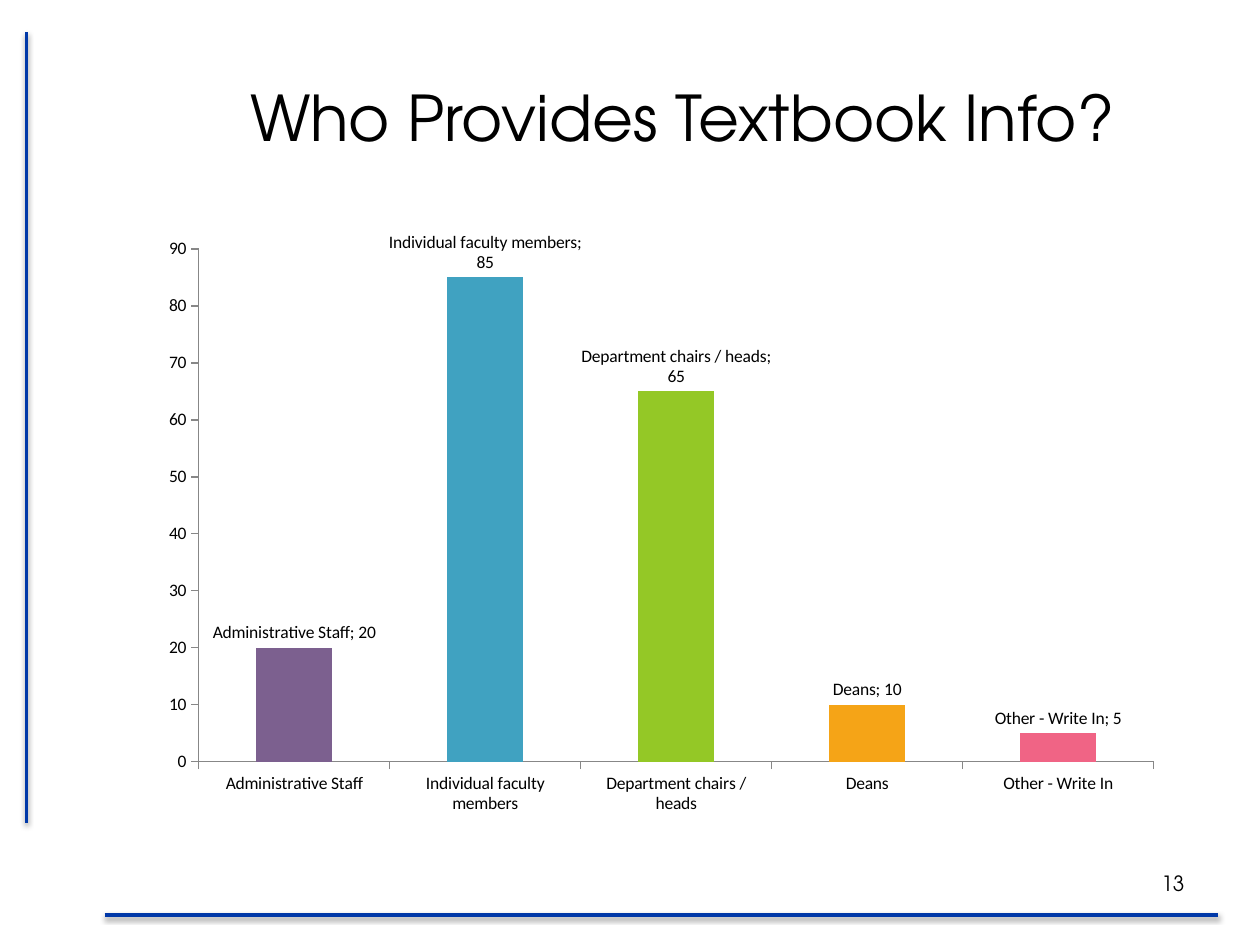
"""Builds a slide with a column chart of who provides textbook information."""
import pptx
import pptx.chart.data
import pptx.dml.color
import pptx.enum.chart
import pptx.enum.shapes
import pptx.enum.text
import pptx.oxml
import pptx.oxml.ns
import pptx.util

Inches = pptx.util.Inches
Pt = pptx.util.Pt
RGBColor = pptx.dml.color.RGBColor
Align = pptx.enum.text.PP_ALIGN
Tick = pptx.enum.chart.XL_TICK_MARK

BLACK = RGBColor(0x00, 0x00, 0x00)
BLUE = RGBColor(0x00, 0x38, 0xA8)
GRAY = RGBColor(0x87, 0x87, 0x87)
PURPLE = RGBColor(0x7C, 0x60, 0x8F)
TEAL = RGBColor(0x40, 0xA2, 0xC1)
GREEN = RGBColor(0x94, 0xC8, 0x26)
ORANGE = RGBColor(0xF5, 0xA4, 0x17)
PINK = RGBColor(0xF0, 0x64, 0x85)

ROWS = [
    ("Administrative Staff", 20, PURPLE),
    ("Individual faculty members", 85, TEAL),
    ("Department chairs / heads", 65, GREEN),
    ("Deans", 10, ORANGE),
    ("Other - Write In", 5, PINK),
]
SHADOW = (
    f"<a:effectLst {pptx.oxml.ns.nsdecls('a')}>"
    f'<a:outerShdw blurRad="{Pt(3.1)}" dist="{Pt(1.6)}" dir="5400000" rotWithShape="0">'
    '<a:srgbClr val="000000"><a:alpha val="38000"/></a:srgbClr>'
    "</a:outerShdw></a:effectLst>"
)
LAYOUT = (
    f"<c:layout {pptx.oxml.ns.nsdecls('c')}><c:manualLayout>"
    '<c:layoutTarget val="inner"/><c:xMode val="edge"/><c:yMode val="edge"/>'
    '<c:x val="0.05"/><c:y val="0.035"/><c:w val="0.93"/><c:h val="0.857"/>'
    "</c:manualLayout></c:layout>"
)

deck = pptx.Presentation()
deck.slide_width = Inches(10)
deck.slide_height = Inches(7.5)
slide = deck.slides.add_slide(deck.slide_layouts[6])


def add_text(text, *, box, size, align, font="TeX Gyre Adventor", color=BLACK):
    frame = slide.shapes.add_textbox(*map(Inches, box)).text_frame
    frame.word_wrap = True
    frame.vertical_anchor = pptx.enum.text.MSO_ANCHOR.MIDDLE
    line = frame.paragraphs[0]
    line.text = text
    line.alignment = align
    line.font.name = font
    line.font.size = Pt(size)
    line.font.color.rgb = color


for ends in [(0.21, 6.53, 0.21, 0.25), (0.83, 7.26, 9.67, 7.26)]:
    rule = slide.shapes.add_connector(
        pptx.enum.shapes.MSO_CONNECTOR.STRAIGHT, *map(Inches, ends)
    )
    rule.line.color.rgb = BLUE
    rule.line.width = Pt(2)
    rule.element.spPr.append(pptx.oxml.parse_xml(SHADOW))

add_text("Who Provides Textbook Info?", box=(1.33, 0.3, 8.17, 1.25), size=36, align=Align.CENTER)
add_text("13", box=(8.9, 6.81, 0.6, 0.4), size=12, align=Align.RIGHT)

data = pptx.chart.data.CategoryChartData()
data.categories = [name for name, count, color in ROWS]
data.add_series("Series 1", [count for name, count, color in ROWS])
chart = slide.shapes.add_chart(
    pptx.enum.chart.XL_CHART_TYPE.COLUMN_CLUSTERED,
    *map(Inches, (1.17, 1.81, 8.15, 4.75)),
    data,
).chart
chart.has_title = False
chart.has_legend = False
chart.font.name = "Calibri"
chart.font.size = Pt(10)
chart.font.color.rgb = BLACK

area = chart.element.find(".//" + pptx.oxml.ns.qn("c:plotArea"))
for old in area.findall(pptx.oxml.ns.qn("c:layout")):
    area.remove(old)
area.insert(0, pptx.oxml.parse_xml(LAYOUT))

for axis in (chart.category_axis, chart.value_axis):
    axis.has_major_gridlines = False
    axis.major_tick_mark = Tick.OUTSIDE
    axis.minor_tick_mark = Tick.NONE
    axis.format.line.color.rgb = GRAY
    axis.format.line.width = Pt(0.75)
chart.value_axis.minimum_scale = 0
chart.value_axis.maximum_scale = 90
chart.value_axis.major_unit = 10

plot = chart.plots[0]
plot.gap_width = 150
plot.vary_by_categories = False
bars = plot.series[0]
for spot, (name, count, color) in enumerate(ROWS):
    fill = bars.points[spot].format.fill
    fill.solid()
    fill.fore_color.rgb = color

tags = bars.data_labels
tags.show_value = True
tags.show_category_name = True
tags.position = pptx.enum.chart.XL_LABEL_POSITION.OUTSIDE_END
mark = pptx.oxml.parse_xml(f"<c:separator {pptx.oxml.ns.nsdecls('c')}>; </c:separator>")
tags._element.find(pptx.oxml.ns.qn("c:showBubbleSize")).addnext(mark)

deck.save("out.pptx")
